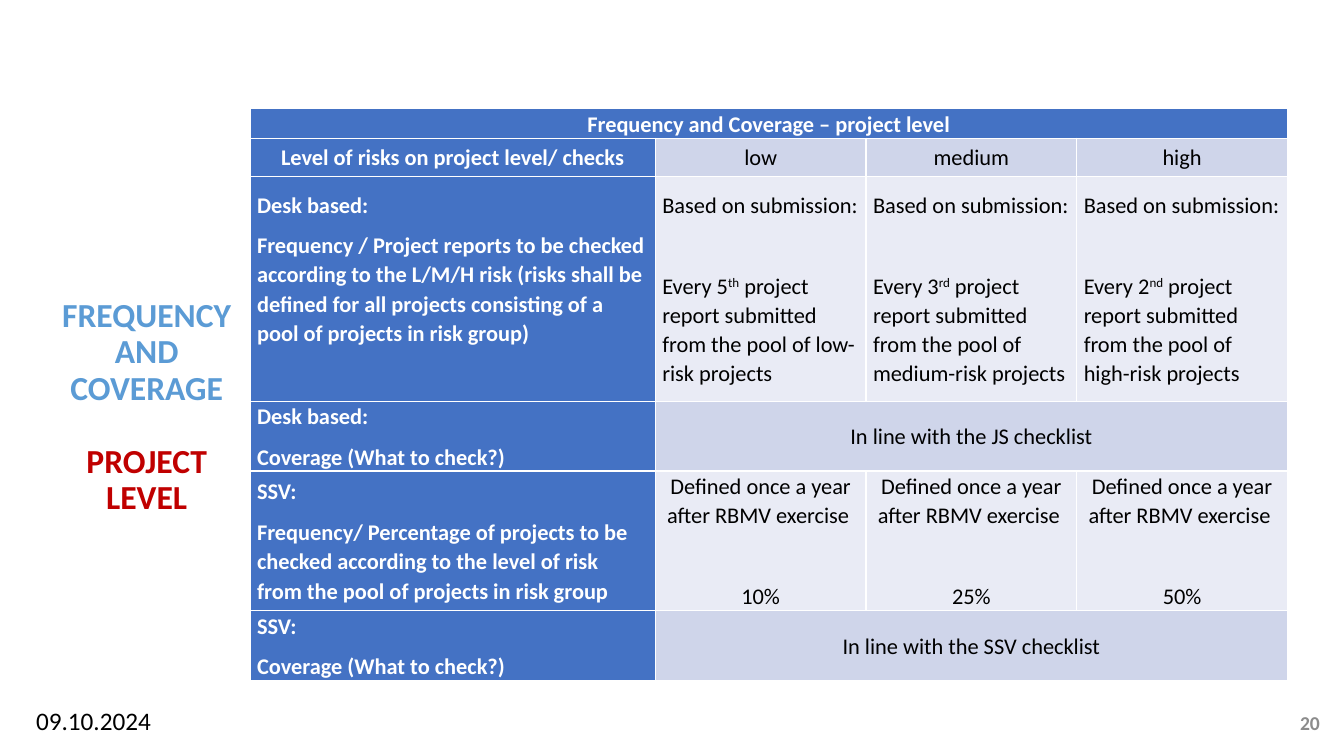
from pptx import Presentation
from pptx.dml.color import RGBColor
from pptx.enum.text import MSO_ANCHOR as Anchor, MSO_AUTO_SIZE as AutoSize, PP_ALIGN as Align
from pptx.util import Inches, Pt

BLUE, BAND, PALE = "4472C4", "CFD5EA", "E9EBF5"
WHITE, BLACK = "FFFFFF", "000000"
LINE_AND_GAP = 29  # height of one 16 pt table line with its 8 pt gap, in points


def color(hex_string):
    return RGBColor.from_string(hex_string)


def write(paragraph, text, size, hex_color, bold=False, align=Align.LEFT):
    """Fill a paragraph; text between carets is raised."""
    paragraph.alignment = align
    for i, part in enumerate(text.split("^")):
        run = paragraph.add_run()
        run.text = part
        run.font.name, run.font.size, run.font.bold = "Calibri", Pt(size), bold
        run.font.color.rgb = color(hex_color)
        if i % 2:
            run._r.get_or_add_rPr().set("baseline", "30000")


deck = Presentation()
deck.slide_width, deck.slide_height = Inches(13.33), Inches(7.5)
slide = deck.slides.add_slide(deck.slide_layouts[5])

# Title beside the table
title = slide.shapes.title
title.left, title.top, title.width, title.height = map(Inches, (0.43, 3.37, 2.05, 1.35))
heading = title.text_frame
heading.word_wrap, heading.auto_size = True, AutoSize.NONE
heading.vertical_anchor = Anchor.MIDDLE
for i, (words, hue) in enumerate([("FREQUENCY AND COVERAGE", "5B9BD5"),
                                  ("PROJECT", "C00000"), ("LEVEL", "C00000")]):
    line = heading.add_paragraph() if i else heading.paragraphs[0]
    write(line, words, 24, hue, True, Align.CENTER)
    line.line_spacing = 0.9
    line.space_before = Pt(26.4 if i == 1 else 0)

# Table: one entry per row, its cells from left to right
reports = [["Based on submission:", f"Every {nth} project report submitted from the pool of {risk}-risk projects"]
           for nth, risk in [("5^th^", "low"), ("3^rd^", "medium"), ("2^nd^", "high")]]
visits = [["Defined once a year after RBMV exercise ", share] for share in ("10%", "25%", "50%")]
coverage = "Coverage (What to check?)"
rows = [
    (0.24, BLUE, [["Frequency and Coverage – project level"]]),
    (0.38, BAND, [["Level of risks on project level/ checks"], ["low"], ["medium"], ["high"]]),
    (2.23, PALE, [["Desk based:", "Frequency / Project reports to be checked according to the L/M/H risk "
                   "(risks shall be defined for all projects consisting of a pool of projects in risk group)"],
                  *reports]),
    (0.6, BAND, [["Desk based:", coverage], ["In line with the JS checklist"]]),
    (1.21, PALE, [["SSV:", "Frequency/ Percentage of projects to be checked according to the level of risk "
                   "from the pool of projects in risk group"], *visits]),
    (0.6, BAND, [["SSV:", coverage], ["In line with the SSV checklist"]]),
]
widths = [4.02, 2.09, 2.09, 2.09]
height = sum(row[0] for row in rows)
table = slide.shapes.add_table(len(rows), len(widths), Inches(2.48), Inches(1.08),
                               Inches(sum(widths)), Inches(height)).table
table.horz_banding = False
for column, width in zip(table.columns, widths):
    column.width = Inches(width)

for r, (row_height, band, contents) in enumerate(rows):
    table.rows[r].height = Inches(row_height)
    if len(contents) < len(widths):
        table.cell(r, len(contents) - 1).merge(table.cell(r, len(widths) - 1))
    for c, lines in enumerate(contents):
        cell = table.cell(r, c)
        cell.fill.solid()
        cell.fill.fore_color.rgb = color(BLUE if c == 0 else band)
        cell.vertical_anchor = Anchor.MIDDLE
        cell.margin_left = cell.margin_right = Inches(0.07)
        cell.margin_top = cell.margin_bottom = 0
        centered = r < 2 or (c > 0 and r > 2)
        for i, words in enumerate(lines):
            line = cell.text_frame.add_paragraph() if i else cell.text_frame.paragraphs[0]
            write(line, words, 16, BLACK if c else WHITE, c == 0,
                  Align.CENTER if centered else Align.LEFT)
            line.line_spacing = 1.07
            line.space_after = Pt(8)
            if i and c:
                line.space_before = Pt(LINE_AND_GAP)
table.cell(2, 0).margin_bottom = Pt(LINE_AND_GAP)

# Footer
for place, words, size, hue, bold, align, anchor in [
        ((0.26, 6.95, 1.84, 0.4), "09.10.2024", 18, BLACK, False, Align.LEFT, Anchor.TOP),
        ((12.66, 6.98, 0.53, 0.38), "20", 14, "8C8C8C", True, Align.RIGHT, Anchor.MIDDLE)]:
    footer = slide.shapes.add_textbox(*map(Inches, place)).text_frame
    footer.word_wrap, footer.vertical_anchor = True, anchor
    write(footer.paragraphs[0], words, size, hue, bold, align)

deck.save("out.pptx")
